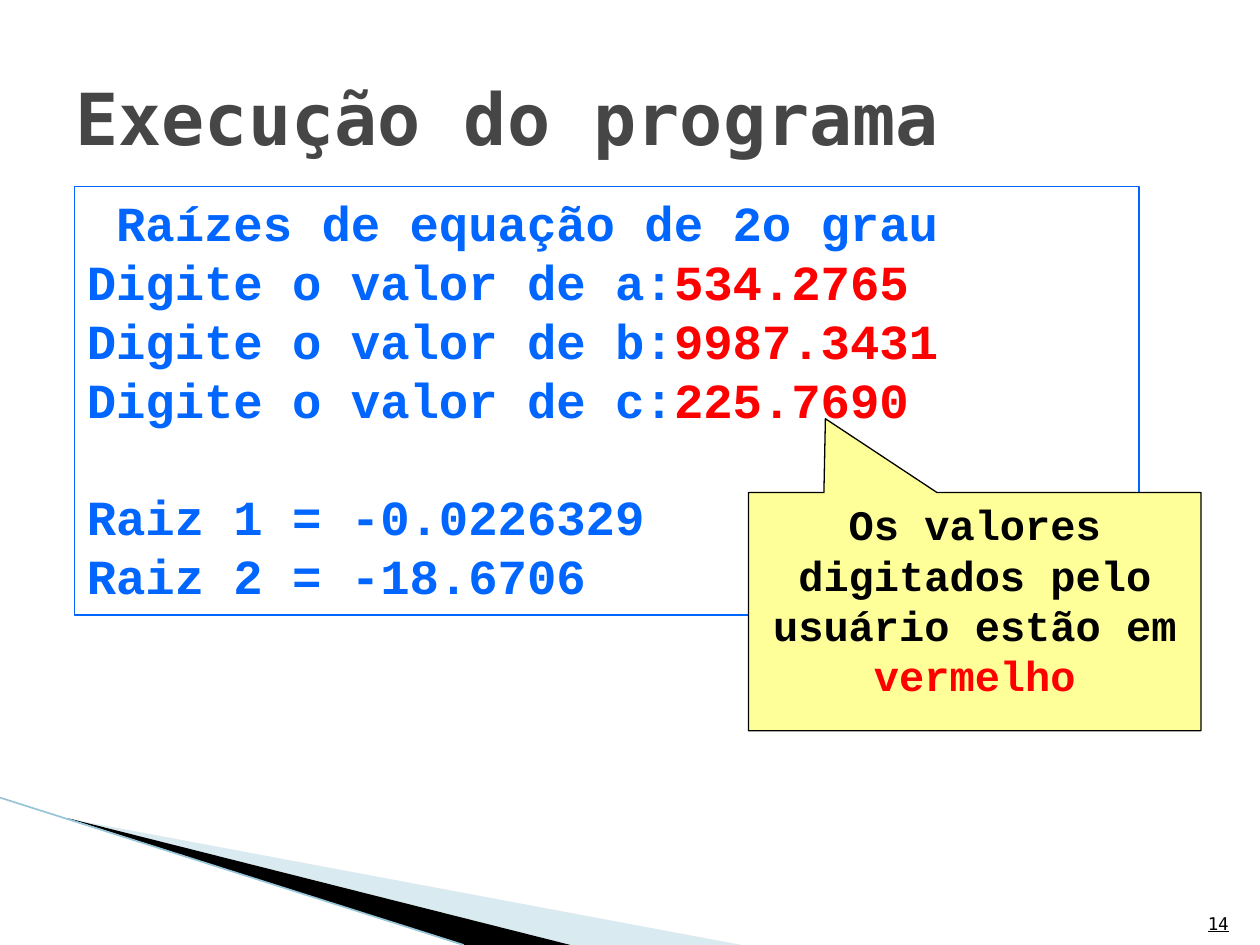
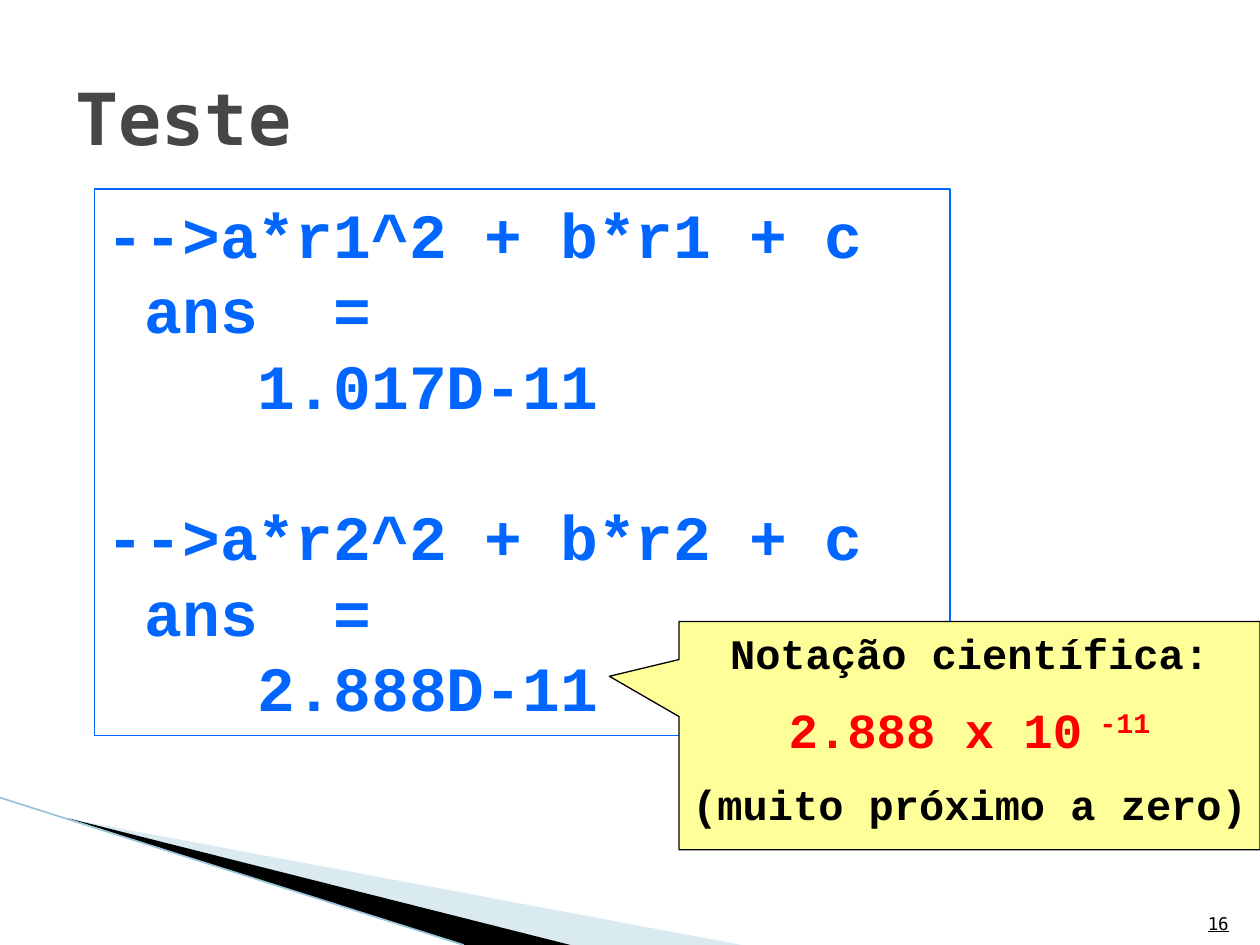
from lxml.etree import SubElement
from pptx import Presentation
from pptx.dml.color import RGBColor
from pptx.enum.shapes import MSO_CONNECTOR, MSO_SHAPE
from pptx.enum.text import MSO_ANCHOR, PP_ALIGN
from pptx.oxml.ns import qn
from pptx.util import Cm, Pt

BLUE = RGBColor(0x00, 0x66, 0xFF)
RED = RGBColor(0xFF, 0x00, 0x00)
BLACK = RGBColor(0x00, 0x00, 0x00)
YELLOW = RGBColor(0xFF, 0xFF, 0x99)
TITLE_GRAY = RGBColor(0x46, 0x46, 0x46)
PALE_BLUE = RGBColor(0xA0, 0xCB, 0xDC)
EDGE_BLUE = RGBColor(0x97, 0xC5, 0xD8)

CODE_FONT = "Courier New"
TITLE_FONT = "DejaVu Sans Mono"
LINE_HEIGHT = 1.2

# A paragraph is (size, space before, runs); a run is (text, colour[, baseline]).
# Boxes are left, top, width, height in centimetres.
# In console lines, None is an empty line and a second item is what the user typed.
SLIDES = [
    {
        "title": "Execução do programa",
        "number": "14",
        "console_box": (1.5, 3.76, 21.46, 8.64),
        "console_size": 28,
        "console": [
            (" Raízes de equação de 2o grau",),
            ("Digite o valor de a:", "534.2765"),
            ("Digite o valor de b:", "9987.3431"),
            ("Digite o valor de c:", "225.7690"),
            None,
            ("Raiz 1 = -0.0226329",),
            ("Raiz 2 = -18.6706",),
        ],
        "callout_box": (15.09, 9.93, 9.12, 4.8),
        "callout_tip": (-0.33, -0.81),
        "callout": [
            (24, 0, [("Os valores digitados pelo usuário estão em ", BLACK),
                     ("vermelho", RED)]),
        ],
    },
    {
        "title": "Teste",
        "number": "16",
        "console_box": (1.9, 3.81, 17.25, 11.02),
        "console_size": 36,
        "console": [
            ("-->a*r1^2 + b*r1 + c",),
            (" ans  =",),
            ("    1.017D-11",),
            None,
            ("-->a*r2^2 + b*r2 + c",),
            (" ans  =",),
            ("    2.888D-11",),
        ],
        "callout_box": (13.69, 12.53, 11.71, 4.6),
        "callout_tip": (-0.62, -0.26),
        "callout": [
            (24, 0, [("Notação científica:", BLACK)]),
            (28, 12, [("2.888 x 10", RED), (" -11", RED, 30)]),
            (24, 12, [("(muito próximo a zero)", BLACK)]),
        ],
    },
]

PALE_WEDGE = [(1.4, 16.51), (14.95, 19.05), (11.5, 19.05)]
BLACK_WEDGE = [(1.35, 16.49), (11.5, 19.05), (9.32, 19.05)]
EDGE = [(0, 16.08), (9.35, 19.05)]


def cm(values):
    return [Cm(value) for value in values]


def console_paragraphs(lines, size):
    """Turn console lines into paragraphs; an empty line becomes space before."""
    paragraphs, gap = [], 0
    for line in lines:
        if line is None:
            gap = size * LINE_HEIGHT
            continue
        paragraphs.append((size, gap, list(zip(line, (BLUE, RED)))))
        gap = 0
    return paragraphs


def write_text(shape, paragraphs, font=CODE_FONT, bold=True,
               align=PP_ALIGN.LEFT, anchor=MSO_ANCHOR.TOP):
    frame = shape.text_frame
    frame.word_wrap = True
    frame.vertical_anchor = anchor
    for index, (size, gap, runs) in enumerate(paragraphs):
        paragraph = frame.add_paragraph() if index else frame.paragraphs[0]
        paragraph.alignment = align
        if gap:
            paragraph.space_before = Pt(gap)
        paragraph.font.name = font
        paragraph.font.size = Pt(size)
        paragraph.font.bold = bold
        for text, color, *baseline in runs:
            run = paragraph.add_run()
            run.text = text
            run.font.color.rgb = color
            if baseline:
                run._r.get_or_add_rPr().set("baseline", str(baseline[0] * 1000))


def add_box(slide, preset, box, line_color, fill_color=None):
    shape = slide.shapes.add_shape(preset, *cm(box))
    shape.shadow.inherit = False
    if fill_color is None:
        shape.fill.background()
    else:
        shape.fill.solid()
        shape.fill.fore_color.rgb = fill_color
    shape.line.color.rgb = line_color
    shape.line.width = Pt(0.75)
    return shape


def add_wedge(slide, points, color, opacity=100):
    start, *others = [cm(point) for point in points]
    builder = slide.shapes.build_freeform(*start)
    builder.add_line_segments(others, close=True)
    wedge = builder.convert_to_shape()
    wedge.shadow.inherit = False
    wedge.fill.solid()
    wedge.fill.fore_color.rgb = color
    wedge.line.fill.background()
    if opacity < 100:
        color_element = wedge._element.spPr.find(
            f"{qn('a:solidFill')}/{qn('a:srgbClr')}")
        SubElement(color_element, qn("a:alpha"), val=str(opacity * 1000))


def add_decoration(slide):
    add_wedge(slide, PALE_WEDGE, PALE_BLUE, opacity=40)
    add_wedge(slide, BLACK_WEDGE, BLACK)
    start, end = EDGE
    edge = slide.shapes.add_connector(MSO_CONNECTOR.STRAIGHT, *cm(start + end))
    edge.line.color.rgb = EDGE_BLUE
    edge.line.width = Pt(0.95)
    SubElement(edge._element.spPr, qn("a:effectLst"))


def add_title_and_number(slide, title, number):
    title_box = slide.shapes.add_textbox(*cm((1.27, 0.76, 22.86, 3.18)))
    write_text(title_box, [(41, 0, [(title, TITLE_GRAY)])],
               font=TITLE_FONT, anchor=MSO_ANCHOR.MIDDLE)
    number_box = slide.shapes.add_textbox(*cm((18.49, 17.93, 6.53, 1.02)))
    write_text(number_box, [(10, 0, [(number, BLACK)])], font=TITLE_FONT,
               bold=False, align=PP_ALIGN.RIGHT, anchor=MSO_ANCHOR.BOTTOM)
    number_box.text_frame.paragraphs[0].runs[0].font.underline = True


def add_slide(presentation, content):
    slide = presentation.slides.add_slide(presentation.slide_layouts[6])
    add_decoration(slide)
    add_title_and_number(slide, content["title"], content["number"])
    console = add_box(slide, MSO_SHAPE.RECTANGLE, content["console_box"], BLUE)
    write_text(console, console_paragraphs(content["console"],
                                           content["console_size"]))
    callout = add_box(slide, MSO_SHAPE.RECTANGULAR_CALLOUT,
                      content["callout_box"], BLACK, YELLOW)
    for index, offset in enumerate(content["callout_tip"]):
        callout.adjustments[index] = offset
    write_text(callout, content["callout"], align=PP_ALIGN.CENTER)


def main():
    presentation = Presentation()
    presentation.slide_width = Cm(25.4)
    presentation.slide_height = Cm(19.05)
    for content in SLIDES:
        add_slide(presentation, content)
    presentation.save("out.pptx")


if __name__ == "__main__":
    main()
